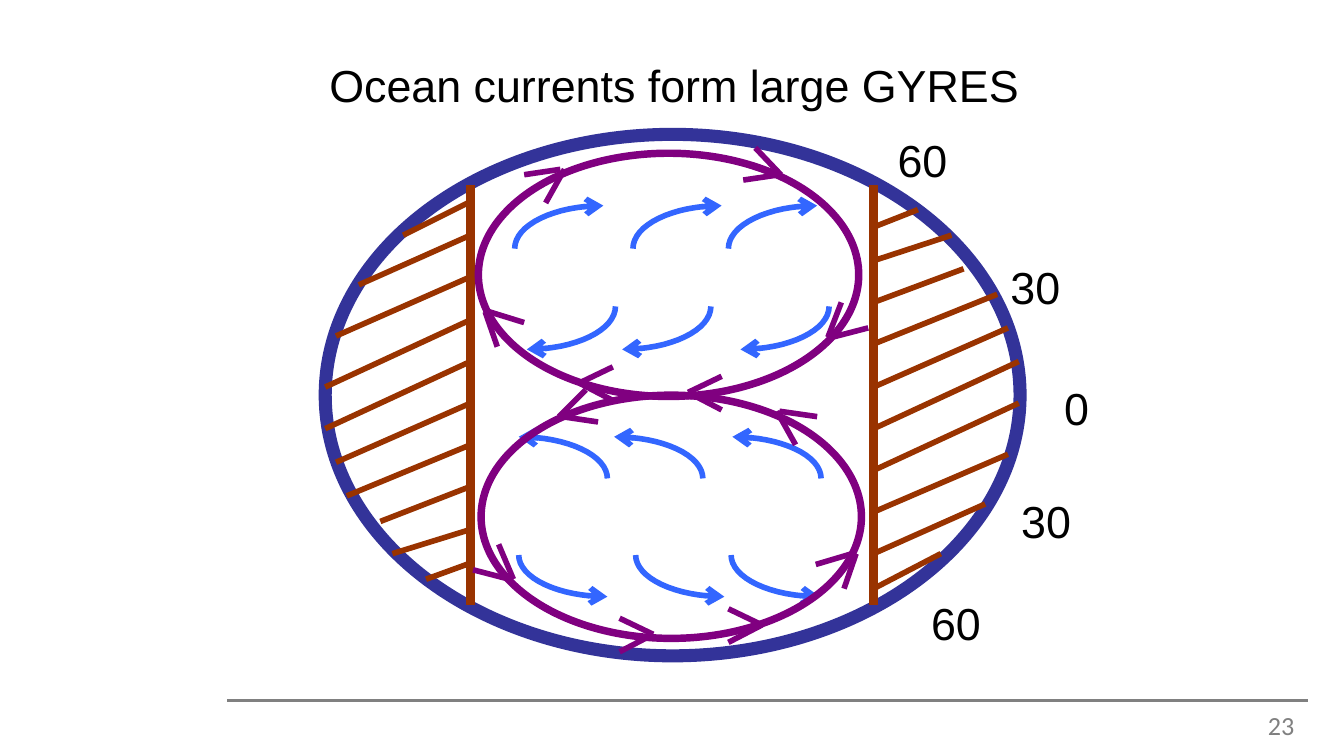
from math import cos, pi, sin
from typing import NamedTuple

from pptx import Presentation
from pptx.dml.color import RGBColor
from pptx.enum.shapes import MSO_CONNECTOR, MSO_SHAPE
from pptx.enum.text import MSO_ANCHOR, PP_ALIGN
from pptx.oxml.ns import qn
from pptx.util import Inches, Pt

STRAIGHT = MSO_CONNECTOR.STRAIGHT
OVAL = MSO_SHAPE.OVAL
LEFT, RIGHT = PP_ALIGN.LEFT, PP_ALIGN.RIGHT
MIDDLE = MSO_ANCHOR.MIDDLE

COLORS = {
    "globe": "333399", "land": "993300", "wind": "3366FF",
    "gyre": "800080", "text": "000000", "grey": "808080", "white": "FFFFFF",
}


class Hatch(NamedTuple):
    y: float
    endx: float
    endy: float


class Winds(NamedTuple):
    starts: tuple
    y: float
    dx: float
    dy: float


class Barb(NamedTuple):
    x1: float
    y1: float
    tipx: float
    tipy: float
    gap: float
    x2: float
    y2: float


class Label(NamedTuple):
    text: str
    x: float
    y: float
    w: float


COASTS = {
    3.5: [
        Hatch(1.5, 3, 1.75), Hatch(1.75, 2.67, 2.12), Hatch(2.06, 2.5, 2.5),
        Hatch(2.38, 2.42, 2.88), Hatch(2.69, 2.42, 3.19), Hatch(3, 2.5, 3.44),
        Hatch(3.31, 2.58, 3.69), Hatch(3.62, 2.83, 3.88),
        Hatch(3.94, 2.92, 4.12), Hatch(4.19, 3.17, 4.31),
    ],
    6.5: [
        Hatch(4.38, 7, 4.12), Hatch(4.12, 7.33, 3.75), Hatch(3.81, 7.5, 3.38),
        Hatch(3.5, 7.58, 3), Hatch(3.19, 7.58, 2.69), Hatch(2.88, 7.5, 2.44),
        Hatch(2.56, 7.42, 2.19), Hatch(2.25, 7.17, 2),
        Hatch(1.94, 7.08, 1.75), Hatch(1.69, 6.83, 1.56),
    ],
}
WINDS = [
    Winds((4.58, 5.29, 6.17), 2.28, -0.66, 0.32),
    Winds((3.86, 4.73, 5.44), 4.13, 0.66, 0.31),
    Winds((4.52, 5.23, 6.11), 3.56, -0.66, -0.31),
    Winds((3.83, 4.71, 5.42), 1.85, 0.66, -0.32),
]
LABELS = [
    Label("0", 7.82, 2.78, 0.39), Label("30", 7.5, 3.62, 0.58),
    Label("30", 7.42, 1.88, 0.58), Label("60", 6.83, 4.38, 0.57),
    Label("60", 6.58, 0.94, 0.57),
]
GYRES = {
    (3.58, 2.94): [
        Barb(5.42, 4.53, 5.67, 4.65, 0, 5.42, 4.78),
        Barb(4.61, 4.6, 4.86, 4.72, 0, 4.61, 4.85),
        Barb(6.07, 4.2, 6.34, 4.12, 0.03, 6.28, 4.38),
        Barb(6.08, 3.1, 5.8, 3.06, -0.02, 5.92, 3.31),
        Barb(3.71, 4.05, 3.82, 4.31, -0.03, 3.52, 4.24),
        Barb(4.45, 3.14, 4.18, 3.1, -0.02, 4.36, 2.9),
    ],
    (3.56, 1.14): [
        Barb(4.56, 2.73, 4.31, 2.85, 0, 4.56, 2.98),
        Barb(5.37, 2.8, 5.12, 2.92, 0, 5.37, 3.05),
        Barb(3.9, 2.4, 3.64, 2.32, -0.03, 3.7, 2.58),
        Barb(3.9, 1.3, 4.17, 1.26, 0.03, 4.06, 1.51),
        Barb(6.26, 2.25, 6.16, 2.51, 0.03, 6.46, 2.44),
        Barb(5.53, 1.34, 5.8, 1.3, 0.01, 5.62, 1.1),
    ],
}


def paint(color: str) -> RGBColor:
    return RGBColor.from_string(COLORS[color])


def ink(shape, color: str, width: float) -> None:
    shape.line.color.rgb = paint(color)
    shape.line.width = Pt(width)


def place(shape, x: float, y: float, w: float, h: float) -> None:
    shape.left, shape.top = Inches(x), Inches(y)
    shape.width, shape.height = Inches(w), Inches(h)


def write(shape, text: str, *, size: float = 24, font: str = "Arial",
          color: str = "text", align=LEFT, wrap: bool = False) -> None:
    frame = shape.text_frame
    frame.word_wrap = wrap
    frame.vertical_anchor = MIDDLE
    frame.text = text
    line = frame.paragraphs[0]
    line.alignment = align
    line.font.size, line.font.name = Pt(size), font
    line.font.color.rgb = paint(color)


def rule(shapes, x1: float, y1: float, x2: float, y2: float,
         color: str, width: float) -> None:
    line = shapes.add_connector(
        STRAIGHT, Inches(x1), Inches(y1), Inches(x2), Inches(y2))
    ink(line, color, width)
    props = line._element.spPr
    props.append(props.makeelement(qn("a:effectLst"), {}))


def ring(shapes, x: float, y: float, w: float, h: float,
         color: str, width: float, fill: str = "") -> None:
    oval = shapes.add_shape(OVAL, Inches(x), Inches(y), Inches(w), Inches(h))
    oval.shadow.inherit = False
    if fill:
        oval.fill.solid()
        oval.fill.fore_color.rgb = paint(fill)
    else:
        oval.fill.background()
    ink(oval, color, width)


def blow(shapes, x: float, row: Winds) -> None:
    steps = 16
    turns = [pi / 2 * i / steps for i in range(1, steps + 1)]
    pen = shapes.build_freeform(Inches(x), Inches(row.y), scale=1.0)
    pen.add_line_segments(
        [(Inches(x + row.dx * (1 - cos(t))), Inches(row.y + row.dy * sin(t)))
         for t in turns], close=False)
    curve = pen.convert_to_shape()
    curve.shadow.inherit = False
    curve.fill.background()
    ink(curve, "wind", 3)
    edge = curve.line._get_or_add_ln()
    edge.append(edge.makeelement(qn("a:tailEnd"), {"type": "arrow"}))


def mark(shapes, barb: Barb) -> None:
    rule(shapes, barb.x1, barb.y1, barb.tipx, barb.tipy, "gyre", 3)
    rule(shapes, barb.tipx + barb.gap, barb.tipy, barb.x2, barb.y2, "gyre", 3)


def main() -> None:
    deck = Presentation()
    deck.slide_width = Inches(10)
    deck.slide_height = deck.slide_width * 9 // 16
    slide = deck.slides.add_slide(deck.slide_layouts[5])
    shapes = slide.shapes

    place(shapes.title, 2.35, 0.38, 5.38, 0.5)
    write(shapes.title, "Ocean currents form large GYRES")

    rule(shapes, 1.69, 5.21, 9.73, 5.21, "grey", 1.5)
    ring(shapes, 2.42, 1, 5.17, 3.88, "globe", 7, fill="white")
    for x in COASTS:
        rule(shapes, x, 1.38, x, 4.5, "land", 5)
    for x, rows in COASTS.items():
        for row in rows:
            rule(shapes, x, row.y, row.endx, row.endy, "land", 3)
    for band in WINDS:
        for x in band.starts:
            blow(shapes, x, band)
    for label in LABELS:
        box = shapes.add_textbox(0, 0, 0, 0)
        place(box, label.x, label.y, label.w, 0.5)
        write(box, label.text)
    for (x, y), barbs in GYRES.items():
        ring(shapes, x, y, 2.83, 1.81, "gyre", 4)
        for barb in barbs:
            mark(shapes, barb)

    number = shapes.add_textbox(0, 0, 0, 0)
    place(number, 7.76, 5.24, 1.97, 0.31)
    write(number, "23", size=14, font="Calibri", color="grey",
          align=RIGHT, wrap=True)
    deck.save("out.pptx")


if __name__ == "__main__":
    main()
